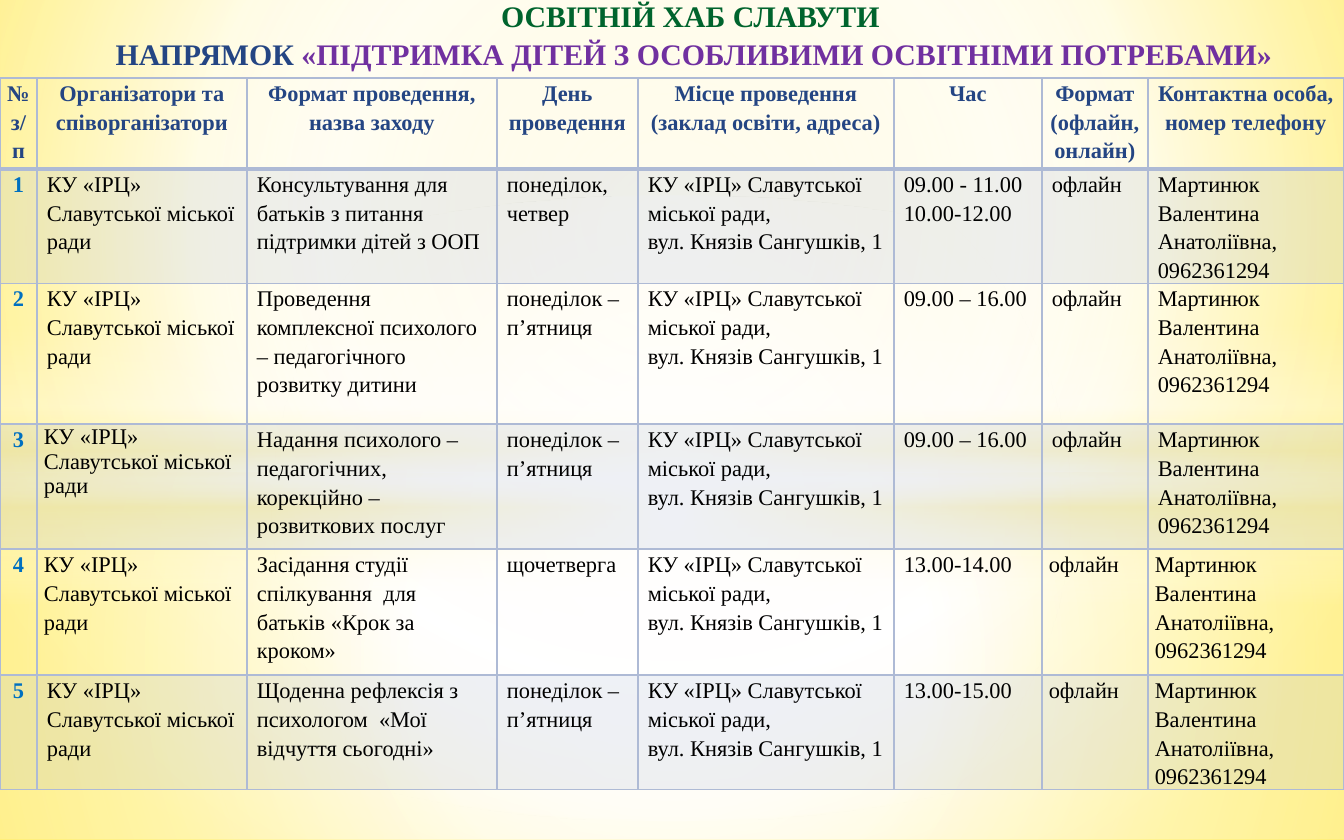
from dataclasses import dataclass

from lxml import etree
from pptx import Presentation
from pptx.dml.color import RGBColor
from pptx.enum.shapes import MSO_SHAPE
from pptx.enum.text import MSO_ANCHOR, MSO_AUTO_SIZE, PP_ALIGN
from pptx.oxml import parse_xml
from pptx.oxml.ns import nsdecls, qn
from pptx.util import Emu, Pt

RECT, OVAL = MSO_SHAPE.RECTANGLE, MSO_SHAPE.OVAL
LEFT, MID = PP_ALIGN.LEFT, PP_ALIGN.CENTER
TOP, BOTTOM = MSO_ANCHOR.TOP, MSO_ANCHOR.BOTTOM
FIXED = MSO_AUTO_SIZE.NONE


@dataclass(frozen=True)
class Theme:
    font: str = "Times New Roman"
    head: int = 16
    body: int = 12
    lead: float = 1.15
    green: str = "00642D"
    navy: str = "244583"
    purple: str = "7030A0"
    blue: str = "0070C0"
    black: str = "000000"
    line: str = "AEBAD5"
    white: str = "FFFFFF"
    cream: str = "FFF39D"
    lemon: str = "FFF18D"
    gold: str = "FFE94E"


T = Theme()
WIDE, HIGH = 1344, 840
SCALE = 914400 / 134.4

# Table content: a line of text is one paragraph
COLS = [37, 210, 250, 141, 256, 148, 106, 196]
ROWS = [91, 95, 141, 125, 126, 103]
HEADS = [
    "№\nз/п",
    "Організатори та співорганізатори",
    "Формат проведення, назва заходу",
    "День проведення",
    "Місце проведення\n(заклад освіти, адреса)",
    "Час",
    "Формат\n(офлайн, онлайн)",
    "Контактна особа,\nномер телефону",
]
HOST = "КУ «ІРЦ» Славутської міської ради"
PLACE = HOST + ",\nвул. Князів Сангушків, 1"
MODE = "офлайн"
PERSON = "Мартинюк Валентина Анатоліївна,\n0962361294"
DAILY = "понеділок –п’ятниця"
EVENTS = [
    ("Консультування для батьків з питання підтримки дітей з ООП",
     "понеділок,\nчетвер", "09.00 - 11.00\n10.00-12.00"),
    ("Проведення комплексної психолого – педагогічного розвитку дитини",
     DAILY, "09.00 – 16.00"),
    ("Надання психолого – педагогічних, корекційно – розвиткових послуг",
     DAILY, "09.00 – 16.00"),
    ("Засідання студії спілкування  для батьків «Крок за кроком»",
     "щочетверга", "13.00-14.00"),
    ("Щоденна рефлексія з психологом  «Мої відчуття сьогодні»",
     DAILY, "13.00-15.00"),
]
# Body cells with the narrow side margin
TIGHT = {(3, 1), (4, 1), (4, 6), (4, 7), (5, 6), (5, 7)}


def px(n):
    return Emu(round(n * SCALE))


def add_run(par, text, size, color, bold):
    run = par.add_run()
    run.text = text
    font = run.font
    font.name, font.size, font.bold = T.font, Pt(size), bold
    font.color.rgb = RGBColor.from_string(color)


def set_grad(props, stops, focus=None):
    """Swap the solid fill in props for a gradient, round if it has a focus."""
    grad = etree.Element(qn("a:gradFill"), rotWithShape="1")
    marks = etree.SubElement(grad, qn("a:gsLst"))
    for pos, color, alpha in stops:
        mark = etree.SubElement(marks, qn("a:gs"), pos=str(pos * 1000))
        tint = etree.SubElement(mark, qn("a:srgbClr"), val=color)
        etree.SubElement(tint, qn("a:alpha"), val=str(alpha * 1000))
    if focus:
        ring = etree.SubElement(grad, qn("a:path"), {"path": "circle"})
        sides = {s: str(v * 1000) for s, v in zip("ltrb", focus)}
        etree.SubElement(ring, qn("a:fillToRect"), sides)
    else:
        etree.SubElement(grad, qn("a:lin"), ang="5400000", scaled="0")
    props.replace(props.find(qn("a:solidFill")), grad)


def add_back(slide, box):
    """Yellow glow behind everything."""
    slide.background.fill.solid()
    props = next(slide._element.iter(qn("p:bgPr")))
    set_grad(props, [(0, T.lemon, 100), (60, T.white, 100), (100, T.gold, 100)],
             (20, 10, 20, 60))
    x, y, w, h = box
    core = (50, 50, 50, 50)
    veils = [
        (RECT, 473, h - 473, core,
         [(0, T.white, 91), (37, T.white, 76), (100, T.cream, 79)]),
        (RECT, 0, 473, core,
         [(0, T.white, 89), (48, T.white, 62), (100, T.cream, 79)]),
        (RECT, 325, 280, None,
         [(0, T.white, 0), (29, T.white, 30), (45, T.cream, 40),
          (55, T.white, 26), (65, T.cream, 60), (100, T.white, 0)]),
        (OVAL, 196, 625, core, [(0, T.white, 100), (54, T.white, 0)]),
    ]
    for kind, top, tall, focus, stops in veils:
        veil = slide.shapes.add_shape(kind, px(x), px(y + top), px(w), px(tall))
        veil.shadow.inherit = False
        veil.line.fill.background()
        veil.fill.solid()
        set_grad(veil._element.spPr, stops, focus)


def set_edges(cell, row):
    """Border lines, heavier under the header."""
    props = cell._tc.get_or_add_tcPr()
    heavy = {(0, "B"), (1, "T")}
    for i, side in enumerate("LRTB"):
        width = Pt(2 if (row, side) in heavy else 1)
        props.insert(i, parse_xml(
            f'<a:ln{side} {nsdecls("a")} w="{width}"><a:solidFill>'
            f'<a:srgbClr val="{T.line}"/></a:solidFill></a:ln{side}>'))


def set_cell(cell, row, col, text):
    head, mark = row == 0, col == 0
    tight = head or mark or (row, col) in TIGHT
    cell.margin_left = cell.margin_right = px(7 if tight else 10)
    cell.margin_top = cell.margin_bottom = 0
    cell.vertical_anchor = TOP
    # Odd rows are shaded
    if row % 2:
        cell.fill.solid()
        cell.fill.fore_color.rgb = RGBColor.from_string(T.line)
        tint = next(cell._tc.tcPr.iter(qn("a:srgbClr")))
        etree.SubElement(tint, qn("a:alpha"), val="20000")
    else:
        cell.fill.background()
    set_edges(cell, row)
    color = T.navy if head else T.blue if mark else T.black
    frame = cell.text_frame
    for i, line in enumerate(text.split("\n")):
        par = frame.add_paragraph() if i else frame.paragraphs[0]
        par.alignment = MID if head or mark else LEFT
        par.line_spacing = 1.0 if (row, col) == (3, 1) else T.lead
        add_run(par, line, T.body, color, head or mark)


def add_plan(slide, box):
    """Timetable of events."""
    x, y, w, h = box
    table = slide.shapes.add_table(
        len(ROWS), len(COLS), px(x), px(y), px(w), px(h)).table
    table.first_row = table.horz_banding = False
    for col, wide in zip(table.columns, COLS):
        col.width = px(wide)
    for row, tall in zip(table.rows, ROWS):
        row.height = px(tall)
    lines = [HEADS]
    for n, (event, day, time) in enumerate(EVENTS, 1):
        lines.append([str(n), HOST, event, day, PLACE, time, MODE, PERSON])
    for r, line in enumerate(lines):
        for c, text in enumerate(line):
            set_cell(table.cell(r, c), r, c, text)


def add_title(slide, box):
    """Two-line heading, set above the glow."""
    title = slide.shapes.title
    title.left, title.top, title.width, title.height = map(px, box)
    slide.shapes._spTree.append(title._element)
    frame = title.text_frame
    frame.word_wrap, frame.auto_size = True, FIXED
    frame.vertical_anchor = BOTTOM
    frame.margin_bottom = px(7)
    lines = [
        [("ОСВІТНІЙ ХАБ СЛАВУТИ", T.green)],
        [(" НАПРЯМОК ", T.navy),
         ("«ПІДТРИМКА ДІТЕЙ З ОСОБЛИВИМИ ОСВІТНІМИ ПОТРЕБАМИ»", T.purple)],
    ]
    for i, line in enumerate(lines):
        par = frame.add_paragraph() if i else frame.paragraphs[0]
        par.alignment, par.line_spacing = MID, 1.05
        par.space_before = Pt(0)
        for text, color in line:
            add_run(par, text, T.head, color, True)


def main():
    deck = Presentation()
    deck.slide_width, deck.slide_height = px(WIDE), px(HIGH)
    slide = deck.slides.add_slide(deck.slide_layouts[5])
    add_back(slide, (0, 0, WIDE, HIGH))
    add_plan(slide, (0, 78, WIDE, sum(ROWS)))
    add_title(slide, (37, -35, WIDE - 37, 113))
    deck.save("out.pptx")


if __name__ == "__main__":
    main()
